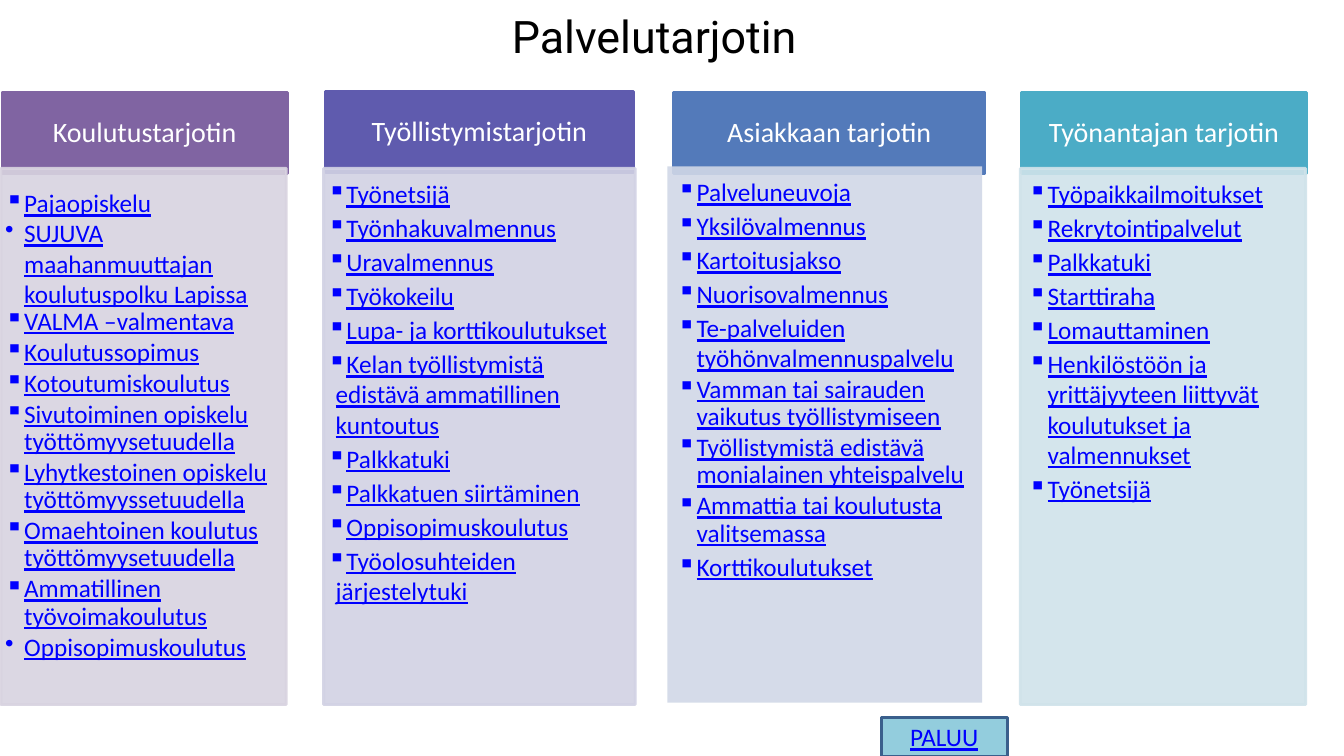
"""Build the Palvelutarjotin slide: four service columns and a return button."""
import pptx
import pptx.util
import pptx.dml.color
import pptx.enum.shapes
import pptx.enum.text
import pptx.oxml.ns
from lxml import etree

Inches, Pt = pptx.util.Inches, pptx.util.Pt
CENTER = pptx.enum.text.PP_ALIGN.CENTER
MIDDLE = pptx.enum.text.MSO_ANCHOR.MIDDLE

TITLE = "Palvelutarjotin"
BUTTON = "PALUU"
COLORS = {
    "white": "FFFFFF", "black": "000000", "link": "0000FF",
    "button": "93CDDD", "button_edge": "3A5F8C",
    "purple": "8064A2", "purple_pale": "D8D3E0",
    "indigo": "5F5BAE", "indigo_pale": "D2D2E4",
    "blue": "537ABA", "blue_pale": "D1D8E7",
    "teal": "4BACC6", "teal_pale": "D0E3EA",
}
TRAYS = [
    {"heading": "Koulutustarjotin", "color": "purple",
     "head": (0.02, 0.92, 2.83), "body": (0.01, 1.67, 2.83),
     "insets": (0.04, 0.19, 0.06, 0.07), "indent": (0.19, -0.19),
     "tight": range(2, 10), "unspaced": (0, 1), "round": (1, 9),
     "services": ["Pajaopiskelu", "SUJUVA maahanmuuttajan koulutuspolku Lapissa",
                  "VALMA –valmentava", "Koulutussopimus", "Kotoutumiskoulutus",
                  "Sivutoiminen opiskelu työttömyysetuudella",
                  "Lyhytkestoinen opiskelu työttömyyssetuudella",
                  "Omaehtoinen koulutus työttömyysetuudella",
                  "Ammatillinen työvoimakoulutus", "Oppisopimuskoulutus"]},
    {"heading": "Työllistymistarjotin", "color": "indigo",
     "head": (3.23, 0.91, 3.05), "body": (3.21, 1.67, 3.09),
     "insets": (0.04, 0.1, 0.14, 0.16), "indent": (0.08, -0.2),
     "services": ["Työnetsijä", "Työnhakuvalmennus", "Uravalmennus", "Työkokeilu",
                  "Lupa- ja korttikoulutukset",
                  "Kelan työllistymistä edistävä ammatillinen kuntoutus",
                  "Palkkatuki", "Palkkatuen siirtäminen", "Oppisopimuskoulutus",
                  "Työolosuhteiden järjestelytuki"]},
    {"heading": "Asiakkaan tarjotin", "color": "blue",
     "head": (6.68, 0.92, 3.09), "body": (6.62, 1.65, 3.12),
     "insets": (0.1, 0.1, 0.14, 0.16), "indent": (0.19, -0.19),
     "tight": range(5, 8), "edgeless": True,
     "services": ["Palveluneuvoja", "Yksilövalmennus", "Kartoitusjakso",
                  "Nuorisovalmennus", "Te-palveluiden työhönvalmennuspalvelu",
                  "Vamman tai sairauden vaikutus työllistymiseen",
                  "Työllistymistä edistävä monialainen yhteispalvelu",
                  "Ammattia tai koulutusta valitsemassa", "Korttikoulutukset"]},
    {"heading": "Työnantajan tarjotin", "color": "teal",
     "head": (10.13, 0.92, 2.83), "body": (10.12, 1.67, 2.83),
     "insets": (0.08, 0.1, 0.14, 0.16), "indent": (0.19, -0.19),
     "services": ["Työpaikkailmoitukset", "Rekrytointipalvelut", "Palkkatuki",
                  "Starttiraha", "Lomauttaminen",
                  "Henkilöstöön ja yrittäjyyteen liittyvät koulutukset ja valmennukset",
                  "Työnetsijä"]},
]
HEAD_HEIGHT, BODY_HEIGHT = 0.8, 5.32
HEAD_INSETS = (0.16, 0.09, 0.16, 0.09)
BUTTON_INSETS = (0.1, 0.05, 0.1, 0.05)
HEADING = {"size": Pt(20), "name": "Calibri"}
LINK = {"size": Pt(18), "name": "Calibri", "underline": True}


def rgb(color):
    return pptx.dml.color.RGBColor.from_string(COLORS[color])


def style(target, formats):
    for attribute, value in formats.items():
        setattr(target, attribute, value)


def write(paragraph, text, font, color):
    run = paragraph.add_run()
    run.text = text
    style(run.font, font)
    run.font.color.rgb = rgb(color)


def add_panel(slide, bounds, fill, edge, insets, alpha=None):
    panel = slide.shapes.add_shape(pptx.enum.shapes.MSO_SHAPE.RECTANGLE, *map(Inches, bounds))
    panel.shadow.inherit = False
    panel.fill.solid()
    panel.fill.fore_color.rgb = rgb(fill)
    if edge:
        panel.line.color.rgb = rgb(edge)
        panel.line.width = Pt(2)
    else:
        panel.line.fill.background()
    if alpha:
        for tint in panel._element.spPr.iter(pptx.oxml.ns.qn("a:srgbClr")):
            etree.SubElement(tint, pptx.oxml.ns.qn("a:alpha"), val=str(alpha * 1000))
    sides = ("margin_left", "margin_top", "margin_right", "margin_bottom")
    style(panel.text_frame, dict(zip(sides, map(Inches, insets)), word_wrap=True))
    return panel.text_frame


def add_label(frame, text, font, color, spacing=1.0):
    frame.vertical_anchor = MIDDLE
    style(frame.paragraphs[0], {"alignment": CENTER, "line_spacing": spacing})
    write(frame.paragraphs[0], text, font, color)


def add_services(frame, tray):
    frame.vertical_anchor = pptx.enum.text.MSO_ANCHOR.TOP
    margin, hang = map(Inches, tray["indent"])
    for index, service in enumerate(tray["services"]):
        paragraph = frame.paragraphs[0] if index == 0 else frame.add_paragraph()
        properties = paragraph._p.get_or_add_pPr()
        properties.set("marL", str(margin))
        properties.set("indent", str(hang))
        mark = "•" if index in tray.get("round", ()) else "▪"
        etree.SubElement(properties, pptx.oxml.ns.qn("a:buChar"), char=mark)
        style(paragraph, {
            "alignment": pptx.enum.text.PP_ALIGN.LEFT,
            "line_spacing": 0.9 if index in tray.get("tight", ()) else 1.0,
            "space_after": Pt(0 if index in tray.get("unspaced", ()) else 2.7),
        })
        write(paragraph, service, LINK, "link")


def main():
    deck = pptx.Presentation()
    style(deck, {"slide_width": Inches(13.33), "slide_height": Inches(7.5)})
    slide = deck.slides.add_slide(deck.slide_layouts[5])

    title = slide.shapes.title
    style(title, dict(zip(("left", "top", "width", "height"), map(Inches, (0.49, 0, 12, 0.71)))))
    add_label(title.text_frame, TITLE, {"size": Pt(32), "name": "Roboto"}, "black")

    for tray in TRAYS:
        color, pale = tray["color"], tray["color"] + "_pale"
        head = add_panel(slide, (*tray["head"], HEAD_HEIGHT), color, color, HEAD_INSETS)
        add_label(head, tray["heading"], HEADING, "white", 0.9)
        edge = None if tray.get("edgeless") else pale
        body = add_panel(slide, (*tray["body"], BODY_HEIGHT), pale, edge, tray["insets"], 90)
        add_services(body, tray)

    button = add_panel(slide, (8.74, 7.12, 1.25, 0.38), "button", "button_edge", BUTTON_INSETS)
    add_label(button, BUTTON, LINK, "link")
    deck.save("out.pptx")


if __name__ == "__main__":
    main()
